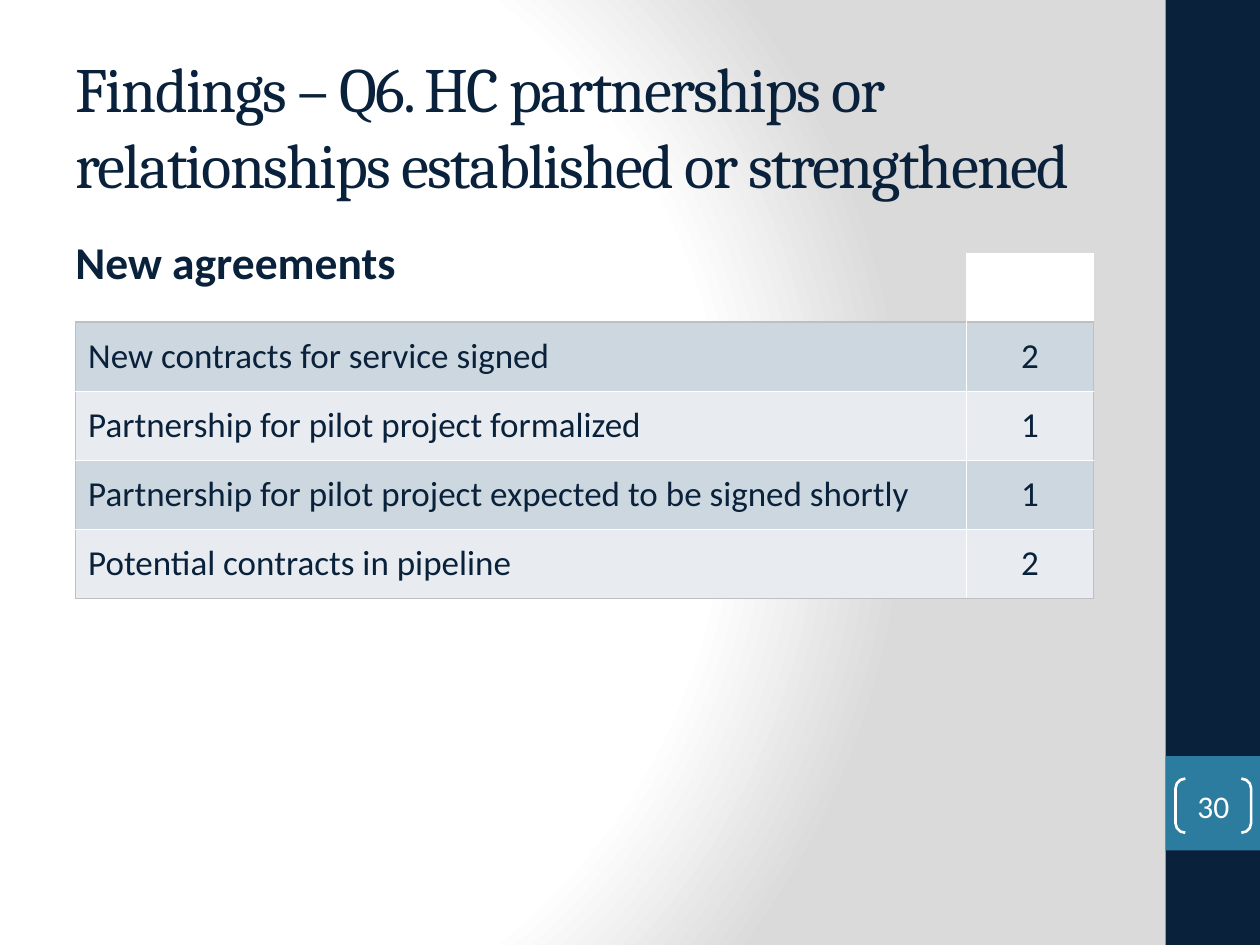
from lxml import etree
from pptx import Presentation
from pptx.dml.color import RGBColor
from pptx.enum import shapes, text
from pptx.oxml import parse_xml
from pptx.oxml.ns import nsdecls, qn
from pptx.util import Inches, Pt

NAVY = RGBColor(0x09, 0x21, 0x3B)
TEAL = RGBColor(0x2C, 0x7C, 0x9F)
WHITE = RGBColor(0xFF, 0xFF, 0xFF)
BACKDROP_GREY = RGBColor(0xDA, 0xDA, 0xDA)
BORDER_GREY = RGBColor(0xBF, 0xBF, 0xBF)
BANDS = (RGBColor(0xCD, 0xD7, 0xDF), RGBColor(0xE8, 0xEC, 0xF0))
NO_STYLE = "{2D5ABB26-0587-4C30-8999-92F81FD0307C}"

AGREEMENTS = [
    ("New contracts for service signed", "2"),
    ("Partnership for pilot project formalized", "1"),
    ("Partnership for pilot project expected to be signed shortly", "1"),
    ("Potential contracts in pipeline", "2"),
]


def style_text(frame, size, color=NAVY, font="Calibri", bold=False,
               align=text.PP_ALIGN.LEFT):
    for paragraph in frame.paragraphs:
        paragraph.alignment = align
        for run in paragraph.runs:
            run.font.name = font
            run.font.size = Pt(size)
            run.font.bold = bold
            run.font.color.rgb = color


def paint_background(slide):
    """Radial white-to-grey gradient centred towards the left."""
    fill = slide.background.fill
    fill.solid()
    stops = "".join(
        f'<a:gs pos="{pos * 1000}"><a:srgbClr val="{color}"/></a:gs>'
        for pos, color in ((0, WHITE), (75, WHITE), (100, BACKDROP_GREY)))
    gradient = parse_xml(
        f'<a:gradFill {nsdecls("a")} rotWithShape="1"><a:gsLst>{stops}</a:gsLst>'
        '<a:path path="circle"><a:fillToRect l="20000" t="50000" r="100000"'
        ' b="50000"/></a:path></a:gradFill>')
    properties = slide.background._cSld.bg.bgPr
    properties.replace(properties.find(qn("a:solidFill")), gradient)


def add_block(slide, left, top, width, height, color):
    block = slide.shapes.add_shape(
        shapes.MSO_SHAPE.RECTANGLE, left, top, width, height)
    block.shadow.inherit = False
    block.fill.solid()
    block.fill.fore_color.rgb = color
    block.line.fill.background()


def add_sidebar(slide, left, top, width, height, number):
    """Dark side band with a square holding the bracketed page number."""
    square_top = top + Inches(6)
    add_block(slide, left, top, width, height, NAVY)
    add_block(slide, left, square_top, width, width, TEAL)

    page = slide.shapes.add_shape(
        shapes.MSO_SHAPE.DOUBLE_BRACKET, left + Inches(0.08),
        square_top + Inches(0.18), Inches(0.6), Inches(0.43))
    page.adjustments[0] = 0.18
    page.shadow.inherit = False
    page.fill.background()
    page.line.color.rgb = WHITE
    page.line.width = Pt(1.5)
    frame = page.text_frame
    frame.margin_left = frame.margin_right = 0
    frame.margin_top = frame.margin_bottom = 0
    frame.vertical_anchor = text.MSO_ANCHOR.MIDDLE
    frame.text = number
    style_text(frame, 18, WHITE, align=text.PP_ALIGN.CENTER)


def place_title(slide, left, top, width, height, wording):
    title = slide.shapes.title
    title.left, title.top, title.width, title.height = left, top, width, height
    frame = title.text_frame
    frame.text = wording
    frame.auto_size = text.MSO_AUTO_SIZE.NONE
    frame.vertical_anchor = text.MSO_ANCHOR.MIDDLE
    style_text(frame, 36, font="Cambria")
    frame.paragraphs[0].runs[0].font._element.set("spc", "-100")


def add_subheading(slide, left, top, width, height, wording):
    frame = slide.shapes.add_textbox(left, top, width, height).text_frame
    frame.word_wrap = True
    frame.text = wording
    frame.paragraphs[0].space_before = Pt(5.2)
    style_text(frame, 26, bold=True)


def set_borders(cell, **colors):
    """Draw 1 pt borders; keys are L, R, T and B."""
    properties = cell._tc.get_or_add_tcPr()
    sides = [side for side in "LRTB" if side in colors]
    for position, side in enumerate(sides):
        line = etree.Element(qn(f"a:ln{side}"), w=str(Pt(1)))
        solid = etree.SubElement(line, qn("a:solidFill"))
        etree.SubElement(solid, qn("a:srgbClr"), val=str(colors[side]))
        properties.insert(position, line)


def add_agreements(slide, left, top, width, height):
    row_count = len(AGREEMENTS) + 1
    table = slide.shapes.add_table(
        row_count, 2, left, top, width, height).table
    table._tbl.tblPr.find(qn("a:tableStyleId")).text = NO_STYLE
    count_width = Inches(1.01)
    table.columns[0].width = width - count_width
    table.columns[1].width = count_width

    header, header_count = table.rows[0].cells
    header.fill.background()
    header_count.fill.solid()
    header_count.fill.fore_color.rgb = WHITE
    for cell in (header, header_count):
        set_borders(cell, B=BORDER_GREY)

    for row, entry in enumerate(AGREEMENTS, start=1):
        for column, wording in enumerate(entry):
            cell = table.cell(row, column)
            cell.text = wording
            cell.vertical_anchor = text.MSO_ANCHOR.MIDDLE
            style_text(cell.text_frame, 20, align=(
                text.PP_ALIGN.CENTER if column else text.PP_ALIGN.LEFT))
            cell.fill.solid()
            cell.fill.fore_color.rgb = BANDS[(row - 1) % 2]
            set_borders(
                cell,
                L=WHITE if column else BORDER_GREY,
                R=BORDER_GREY if column else WHITE,
                T=BORDER_GREY if row == 1 else WHITE,
                B=BORDER_GREY if row == row_count - 1 else WHITE)


def main():
    deck = Presentation()
    deck.slide_width, deck.slide_height = Inches(10), Inches(7.5)
    slide = deck.slides.add_slide(deck.slide_layouts.get_by_name("Title Only"))
    paint_background(slide)
    add_sidebar(slide, Inches(9.25), 0, Inches(0.75), deck.slide_height, "30")
    place_title(
        slide, Inches(0.5), Inches(0.37), Inches(8.56), Inches(1.25),
        "Findings – Q6. HC partnerships or relationships established or "
        "strengthened")
    add_subheading(slide, Inches(0.5), Inches(1.81), Inches(8.33),
                   Inches(0.64), "New agreements")
    add_agreements(slide, Inches(0.6), Inches(2.01), Inches(8.08),
                   Inches(2.74))
    deck.save("out.pptx")


if __name__ == "__main__":
    main()
